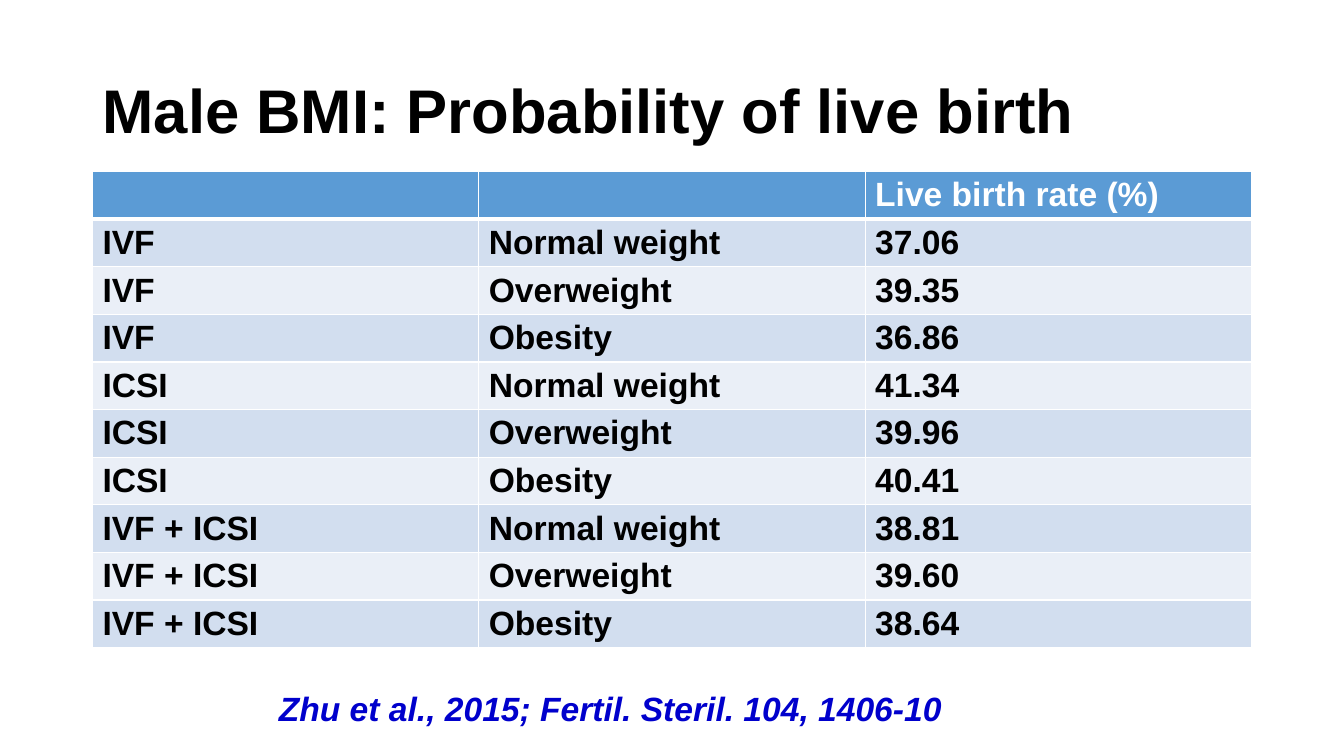
from itertools import product

from lxml import etree
from pptx import Presentation
from pptx.dml.color import RGBColor
from pptx.enum.text import MSO_ANCHOR, MSO_AUTO_SIZE, PP_ALIGN
from pptx.oxml.ns import qn
from pptx.util import Cm, Pt

TITLE = "Male BMI: Probability of live birth"
SOURCE = "Zhu et al., 2015; Fertil. Steril. 104, 1406-10"
HEADER = ("", "", "Live birth rate (%)")
TREATMENTS = ("IVF", "ICSI", "IVF + ICSI")
WEIGHTS = ("Normal weight", "Overweight", "Obesity")
RATES = ("37.06", "39.35", "36.86", "41.34", "39.96", "40.41", "38.81", "39.60", "38.64")

FONT = "Arial"
BLACK, WHITE, CITATION_BLUE = "000000", "FFFFFF", "0000CC"
HEADER_FILL = "5B9BD5"
BAND_FILLS = ("D2DEEF", "EAEFF7")

LEFT, WIDTH = 2.33, 29.21
TABLE_TOP, ROW_HEIGHT = 4.32, 1.2


def color(value):
    return RGBColor.from_string(value)


def add_text(frame, text, size, ink, italic=False):
    para = frame.paragraphs[0]
    para.alignment = PP_ALIGN.LEFT
    span = para.add_run()
    span.text = text
    span.font.name = FONT
    span.font.size = Pt(size)
    span.font.bold = True
    span.font.italic = italic
    span.font.color.rgb = color(ink)
    return para


def add_borders(cell, widths):
    """Draw white borders, with widths in points for left, right, top, bottom."""
    properties = cell._tc.get_or_add_tcPr()
    for side, width in zip("LRTB", widths):
        line = etree.SubElement(properties, qn(f"a:ln{side}"), w=str(Pt(width)))
        fill = etree.SubElement(line, qn("a:solidFill"))
        etree.SubElement(fill, qn("a:srgbClr"), val=WHITE)


def add_title(page):
    title = page.shapes.title
    title.left, title.top = Cm(LEFT), Cm(1.01)
    title.width, title.height = Cm(WIDTH), Cm(3.68)
    title.text_frame.vertical_anchor = MSO_ANCHOR.MIDDLE
    add_text(title.text_frame, TITLE, 44, BLACK).line_spacing = 0.9


def add_rate_table(page):
    groups = product(TREATMENTS, WEIGHTS)
    rows = [HEADER] + [(*group, rate) for group, rate in zip(groups, RATES)]
    table = page.shapes.add_table(
        len(rows), len(HEADER), Cm(LEFT), Cm(TABLE_TOP),
        Cm(WIDTH), Cm(ROW_HEIGHT * len(rows)),
    ).table
    for row_index, row in enumerate(rows):
        is_header = row_index == 0
        for column_index, text in enumerate(row):
            cell = table.cell(row_index, column_index)
            top = 3 if row_index == 1 else 1
            add_borders(cell, (1, 1, top, 3 if is_header else 1))
            cell.fill.solid()
            fill = HEADER_FILL if is_header else BAND_FILLS[(row_index - 1) % 2]
            cell.fill.fore_color.rgb = color(fill)
            if text:
                add_text(cell.text_frame, text, 24, WHITE if is_header else BLACK)


def add_source(page):
    box = page.shapes.add_textbox(Cm(6.78), Cm(17.22), Cm(17.37), Cm(1.27))
    box.text_frame.word_wrap = False
    box.text_frame.auto_size = MSO_AUTO_SIZE.SHAPE_TO_FIT_TEXT
    add_text(box.text_frame, SOURCE, 24, CITATION_BLUE, italic=True)


def main():
    deck = Presentation()
    deck.slide_width, deck.slide_height = Cm(33.87), Cm(19.05)
    page = deck.slides.add_slide(deck.slide_layouts[5])
    add_title(page)
    add_rate_table(page)
    add_source(page)
    deck.save("out.pptx")


if __name__ == "__main__":
    main()
